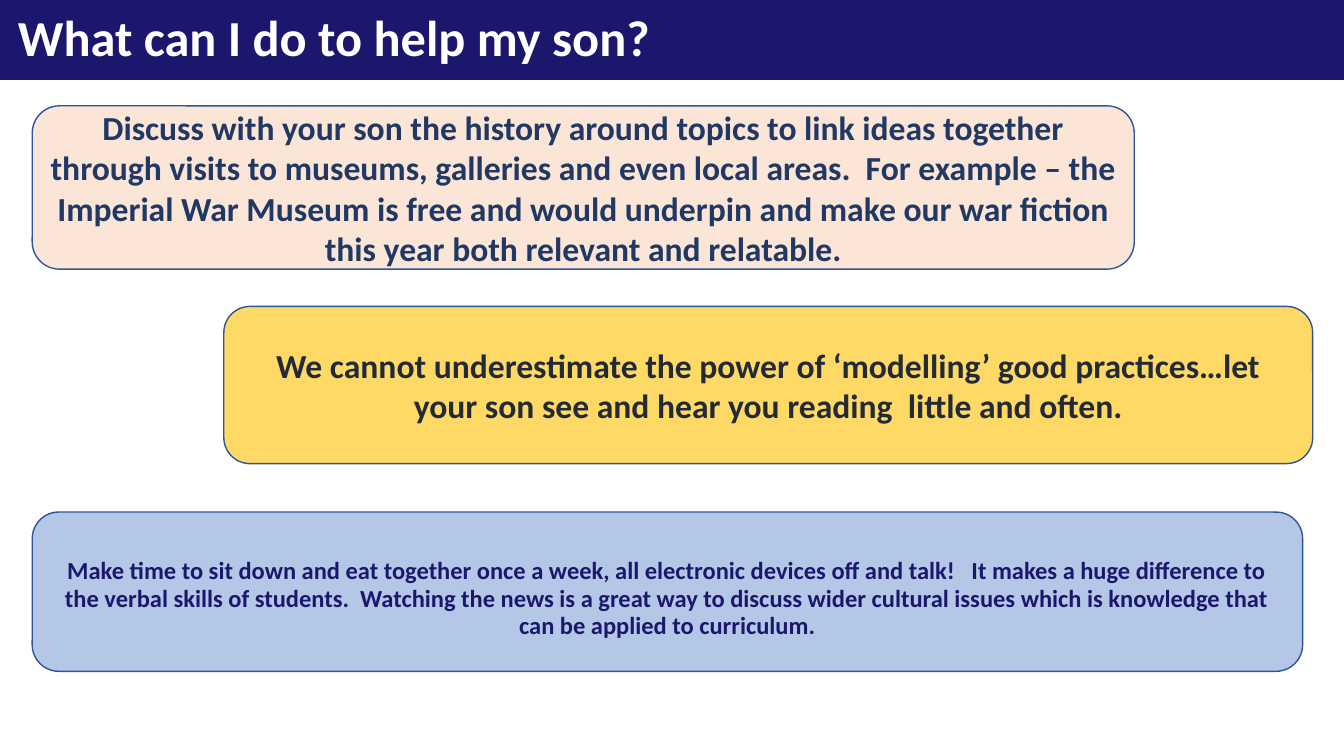
from dataclasses import dataclass

from pptx import Presentation
from pptx import util as u
from pptx.dml import color
from pptx.enum import shapes, text


@dataclass(frozen=True)
class Theme:
    font: str = "Calibri"
    navy: str = "1B176C"
    white: str = "FFFFFF"
    outline: str = "2F5597"
    peach: str = "FBE5D6"
    dark_blue: str = "203864"
    yellow: str = "FFD966"
    charcoal: str = "222A35"
    pale_blue: str = "B4C7E7"
    title_size: float = 36
    advice_size: float = 24
    detail_size: float = 17.5


THEME = Theme()
SLIDE_WIDTH, SLIDE_HEIGHT = 13.33, 7.5


def add_panel(slide, preset, box, fill, outline):
    shape = slide.shapes.add_shape(preset, *map(u.Inches, box))
    shape.shadow.inherit = False
    shape.fill.solid()
    shape.fill.fore_color.rgb = color.RGBColor.from_string(fill)
    shape.line.color.rgb = color.RGBColor.from_string(outline)
    shape.line.width = u.Pt(1)
    return shape


def write_text(shape, wording, size, ink, alignment, line_spacing):
    frame = shape.text_frame
    frame.word_wrap = True
    frame.vertical_anchor = text.MSO_ANCHOR.MIDDLE
    paragraph = frame.paragraphs[0]
    paragraph.alignment = alignment
    paragraph.line_spacing = line_spacing
    run = paragraph.add_run()
    run.text = wording
    run.font.name = THEME.font
    run.font.size = u.Pt(size)
    run.font.bold = True
    run.font.color.rgb = color.RGBColor.from_string(ink)


def add_title_bar(slide, box, wording):
    left, top, width, height = box
    add_panel(slide, shapes.MSO_SHAPE.RECTANGLE, box, THEME.navy, THEME.navy)
    title_box = (left + 0.08, top, width - 0.73, height)
    title = slide.shapes.add_textbox(*map(u.Inches, title_box))
    write_text(title, wording, THEME.title_size, THEME.white, text.PP_ALIGN.LEFT, 0.9)


def add_advice(slide, box, wording, fill, ink, size, line_spacing=1.0, top_inset=0.05):
    card = add_panel(slide, shapes.MSO_SHAPE.ROUNDED_RECTANGLE, box, fill, THEME.outline)
    card.text_frame.margin_top = u.Inches(top_inset)
    write_text(card, wording, size, ink, text.PP_ALIGN.CENTER, line_spacing)


def build_help_slide(presentation):
    slide = presentation.slides.add_slide(presentation.slide_layouts[6])
    add_title_bar(slide, (0, 0, SLIDE_WIDTH, 0.79), "What can I do to help my son?")
    add_advice(
        slide, (0.32, 1.05, 10.93, 1.62),
        "Discuss with your son the history around topics to link ideas together "
        "through visits to museums, galleries and even local areas.  For example – "
        "the Imperial War Museum is free and would underpin and make our war fiction "
        "this year both relevant and relatable.",
        THEME.peach, THEME.dark_blue, THEME.advice_size)
    add_advice(
        slide, (2.22, 3.04, 10.8, 1.56),
        "We cannot underestimate the power of ‘modelling’ good practices…let your "
        "son see and hear you reading  little and often.",
        THEME.yellow, THEME.charcoal, THEME.advice_size)
    add_advice(
        slide, (0.32, 5.08, 12.6, 1.58),
        "Make time to sit down and eat together once a week, all electronic devices "
        "off and talk!   It makes a huge difference to the verbal skills of students.  "
        "Watching the news is a great way to discuss wider cultural issues which is "
        "knowledge that can be applied to curriculum.",
        THEME.pale_blue, THEME.navy, THEME.detail_size,
        line_spacing=0.94, top_inset=0.19)


def main():
    presentation = Presentation()
    presentation.slide_width = u.Inches(SLIDE_WIDTH)
    presentation.slide_height = u.Inches(SLIDE_HEIGHT)
    build_help_slide(presentation)
    presentation.save("out.pptx")


if __name__ == "__main__":
    main()
